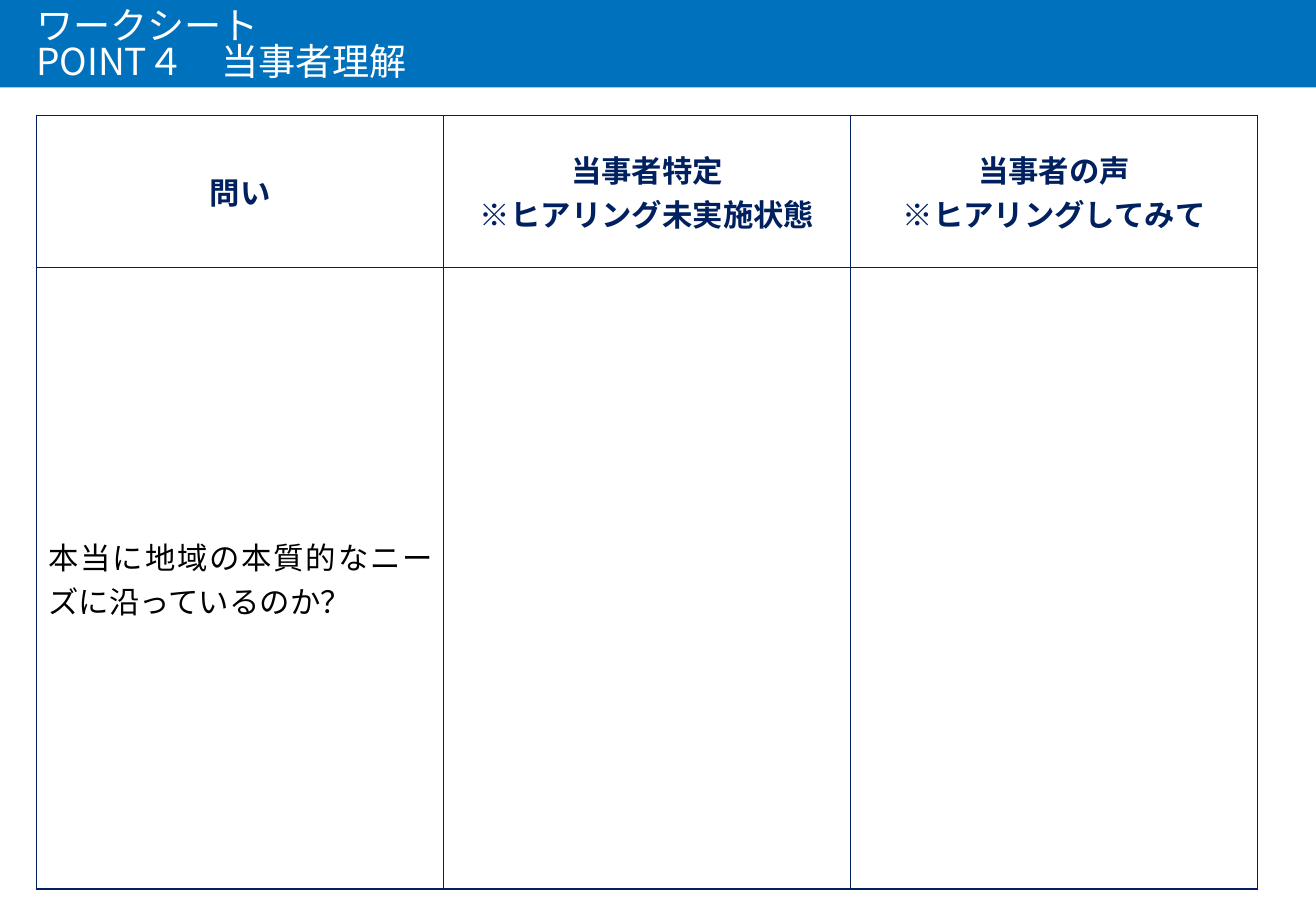
from lxml.etree import SubElement
from pptx import Presentation
from pptx.dml.color import RGBColor
from pptx.enum.shapes import MSO_SHAPE as Shape
from pptx.enum.text import MSO_ANCHOR as Anchor, PP_ALIGN as Align
from pptx.oxml.ns import qn
from pptx.util import Inches, Pt

COLORS = {"band": "0071BC", "navy": "002060", "black": "000000", "white": "FFFFFF"}
EAST_ASIAN_FONT = "Noto Sans CJK JP"
TITLE = ["ワークシート", "POINT４\u3000当事者理解".replace("\u3000", "　")]
HEADERS = [
    ["問い"],
    ["当事者特定", "※ヒアリング未実施状態"],
    ["当事者の声", "※ヒアリングしてみて"],
]
ANSWERS = [["本当に地域の本質的なニーズに沿っているのか？"], [], []]
SLIDE_WIDTH, SLIDE_HEIGHT = 10.83, 7.5
TABLE_LEFT, TABLE_TOP = 0.3, 0.95
COLUMN_WIDTH = 3.35
ROW_HEIGHTS = [1.25, 5.12]
ROW_STYLES = [
    {"align": Align.CENTER, "font": "Calibri", "color": "navy", "bold": True},
    {"align": Align.JUSTIFY, "font": "Arial", "color": "black", "bold": False},
]


def add_run(paragraph, text, size, font, color, bold=False):
    run = paragraph.add_run()
    run.text = text
    run.font.size = Pt(size)
    run.font.name = font
    run.font.bold = bold
    run.font.color.rgb = RGBColor.from_string(COLORS[color])
    east_asian = SubElement(run.font._element, qn("a:ea"))
    east_asian.set("typeface", EAST_ASIAN_FONT)


def add_borders(cell, color):
    properties = cell._tc.get_or_add_tcPr()
    for position, side in enumerate(("lnL", "lnR", "lnT", "lnB")):
        line = SubElement(properties, qn(f"a:{side}"), w=str(Pt(1)))
        fill = SubElement(line, qn("a:solidFill"))
        SubElement(fill, qn("a:srgbClr"), val=COLORS[color])
        properties.insert(position, line)


def add_header_band(slide):
    band = slide.shapes.add_shape(
        Shape.RECTANGLE, 0, 0, Inches(SLIDE_WIDTH), Inches(0.72)
    )
    band.shadow.inherit = False
    band.fill.solid()
    band.fill.fore_color.rgb = RGBColor.from_string(COLORS["band"])
    band.line.fill.background()


def add_title(slide):
    box = slide.shapes.add_textbox(
        Inches(TABLE_LEFT), Inches(0.17), Inches(10.24), Inches(0.43)
    )
    frame = box.text_frame
    frame.word_wrap = True
    frame.vertical_anchor = Anchor.MIDDLE
    frame.margin_left = frame.margin_right = 0
    frame.margin_top = frame.margin_bottom = 0
    paragraph = frame.paragraphs[0]
    paragraph.line_spacing = 0.82
    for index, text in enumerate(TITLE):
        if index:
            paragraph.add_line_break()
        add_run(paragraph, text, 22, EAST_ASIAN_FONT, "white")


def fill_cell(cell, lines, style):
    cell.fill.background()
    cell.vertical_anchor = Anchor.MIDDLE
    add_borders(cell, "navy")
    frame = cell.text_frame
    for index, text in enumerate(lines):
        paragraph = frame.add_paragraph() if index else frame.paragraphs[0]
        paragraph.alignment = style["align"]
        add_run(paragraph, text, 18, style["font"], style["color"], style["bold"])


def add_worksheet(slide):
    rows = [HEADERS, ANSWERS]
    table = slide.shapes.add_table(
        len(rows), len(HEADERS), Inches(TABLE_LEFT), Inches(TABLE_TOP),
        Inches(COLUMN_WIDTH * len(HEADERS)), Inches(sum(ROW_HEIGHTS)),
    ).table
    table.first_row = False
    table.horz_banding = False
    for column in table.columns:
        column.width = Inches(COLUMN_WIDTH)
    for row_index, (row, height) in enumerate(zip(rows, ROW_HEIGHTS)):
        table.rows[row_index].height = Inches(height)
        for column_index, lines in enumerate(row):
            fill_cell(table.cell(row_index, column_index), lines, ROW_STYLES[row_index])


def main():
    presentation = Presentation()
    presentation.slide_width = Inches(SLIDE_WIDTH)
    presentation.slide_height = Inches(SLIDE_HEIGHT)
    slide = presentation.slides.add_slide(presentation.slide_layouts[6])
    add_header_band(slide)
    add_title(slide)
    add_worksheet(slide)
    presentation.save("out.pptx")


if __name__ == "__main__":
    main()
